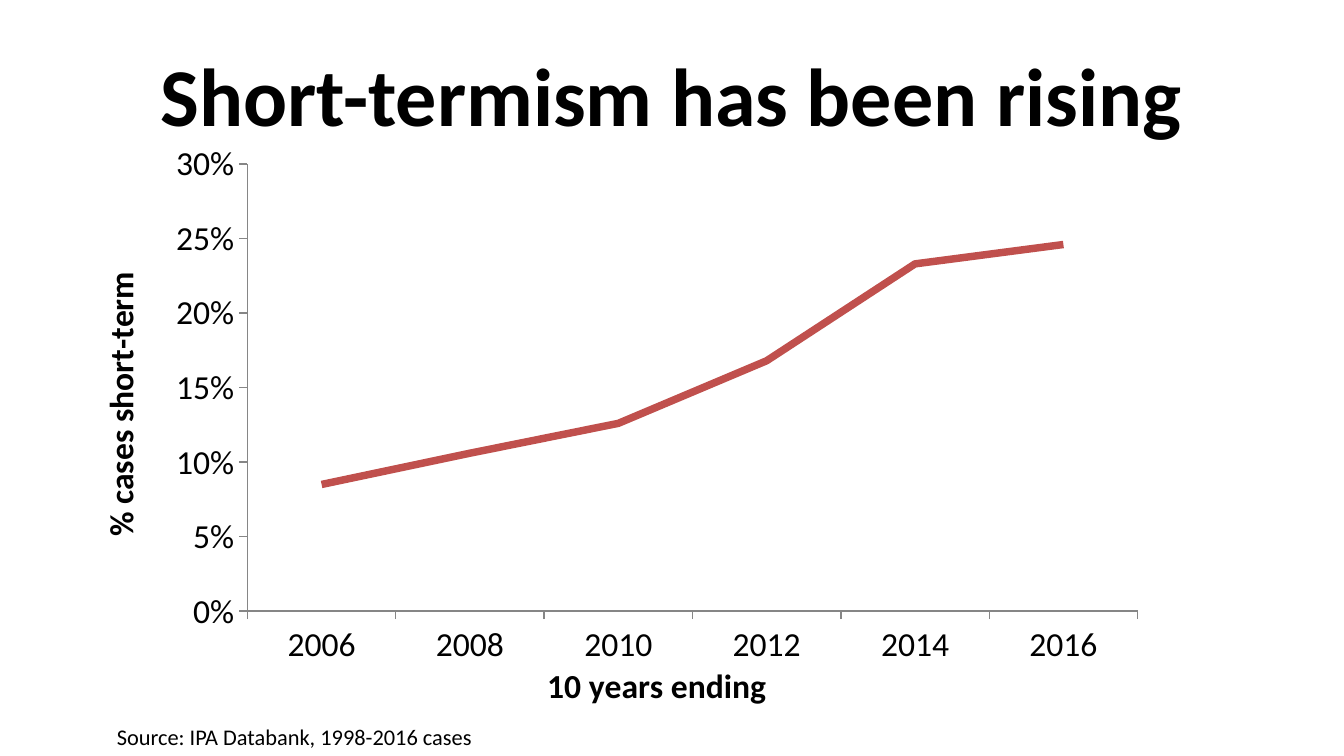
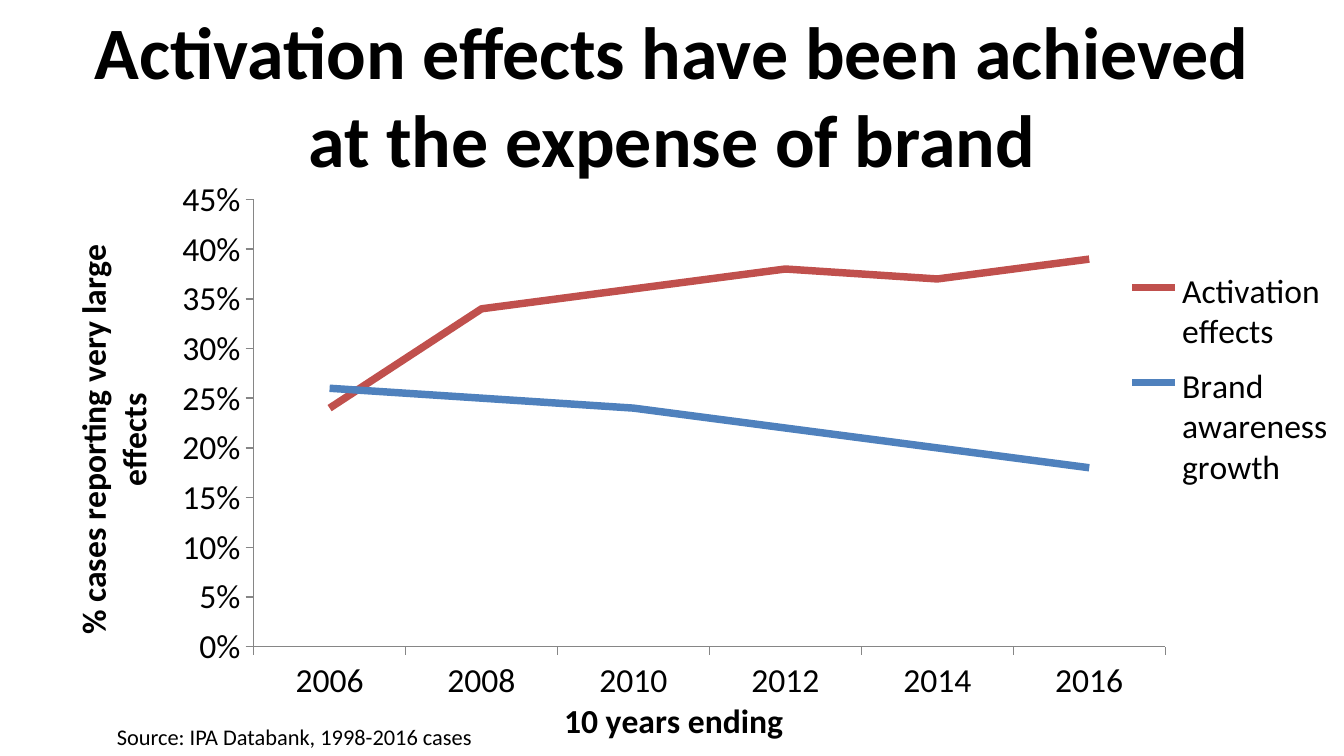
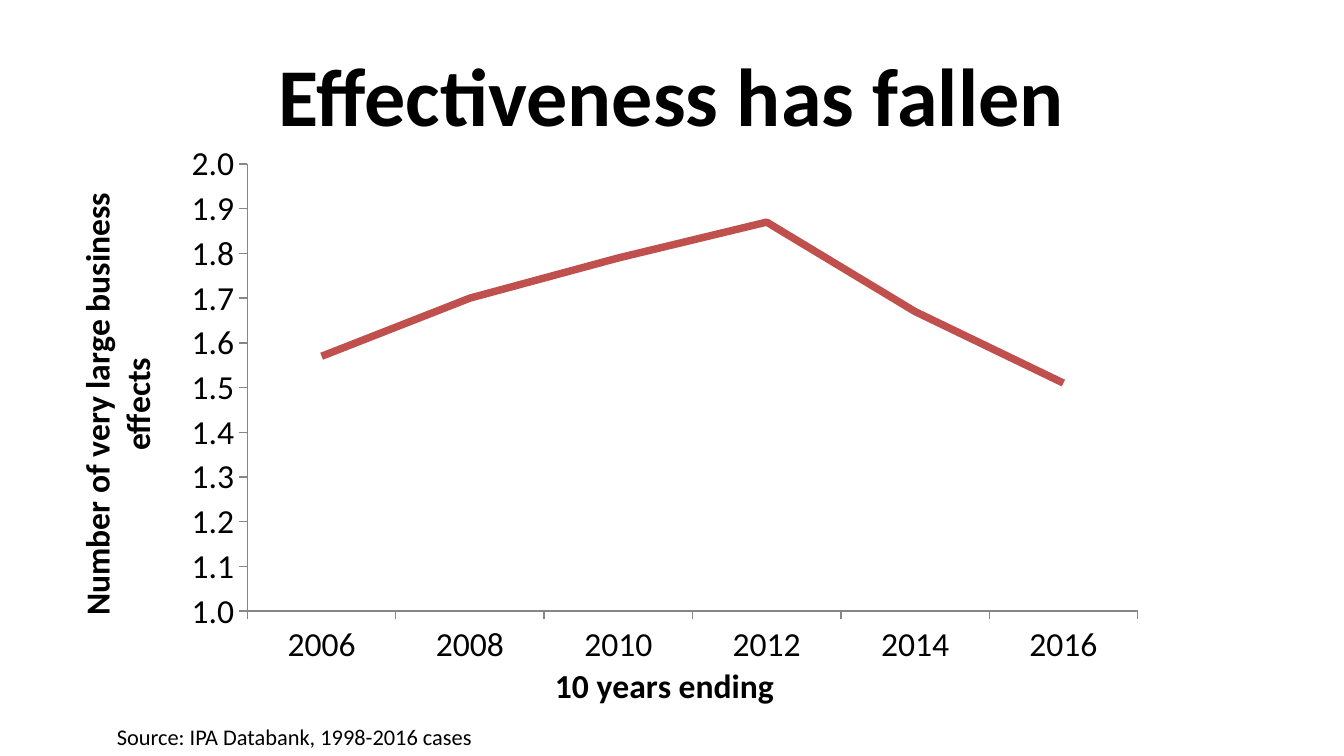
from lxml import etree
from pptx import Presentation
from pptx.chart.data import CategoryChartData as Data
from pptx.dml.color import RGBColor
from pptx.enum.chart import XL_CHART_TYPE as Kind, XL_LEGEND_POSITION as Side
from pptx.enum.chart import XL_TICK_MARK as Tick
from pptx.enum.text import MSO_ANCHOR as Anchor, MSO_AUTO_SIZE as Fit, PP_ALIGN as Align
from pptx.oxml.ns import qn
from pptx.util import Pt

FONT = "Calibri"
BLACK, GREY, RED, BLUE = "000000", "868686", "C0504D", "4F81BD"
YEARS = ["2006", "2008", "2010", "2012", "2014", "2016"]
SOURCE = "Source: IPA Databank, 1998-2016 cases"
BOX = (36, 72, 648, 312)
PLOT = (0.149, 0.051, 0.736, 0.768)

SLIDES = [
    dict(
        title="Short-termism has been rising", size=44, box=BOX, plot=PLOT,
        label="% cases short-term", scale=(0, 0.3, 0.05), code="0%",
        lines=[("Series 1", RED, (0.085, 0.106, 0.126, 0.168, 0.233, 0.246))],
    ),
    dict(
        title="Activation effects have been achieved at the expense of brand",
        size=39.6, box=(34, 91, 684, 312), plot=(0.149, 0.051, 0.714, 0.768),
        label="% cases reporting very large effects", scale=(0, 0.45, 0.05), code="0%",
        lines=[
            ("Activation effects", RED, (0.24, 0.34, 0.36, 0.38, 0.37, 0.39)),
            ("Brand awareness growth", BLUE, (0.26, 0.25, 0.24, 0.22, 0.2, 0.18)),
        ],
        legend=(0.83, 0.15, 0.17, 0.42),
    ),
    dict(
        title="Effectiveness has fallen", size=44, box=BOX, plot=PLOT,
        label="Number of very large business effects", scale=(1, 2, 0.1), code="0.0",
        lines=[("Series 1", RED, (1.57, 1.7, 1.79, 1.87, 1.67, 1.51))],
    ),
]


def color(text):
    """Turn a hex string into a colour."""
    return RGBColor.from_string(text)


def style(font, size, bold=False):
    """Set the shared font at a size and weight."""
    for key, value in dict(name=FONT, size=Pt(size), bold=bold).items():
        setattr(font, key, value)
    font.color.rgb = color(BLACK)


def write(slide, text, box, size, look, bold=False, align=Align.LEFT):
    """Add a line of text in a box with the given frame settings."""
    frame = slide.shapes.add_textbox(*map(Pt, box)).text_frame
    for key, value in look.items():
        setattr(frame, key, value)
    par = frame.paragraphs[0]
    par.text, par.alignment = text, align
    style(par.runs[0].font, size, bold)


def place(node, spot, index, inner=False):
    """Give a chart element a fixed place as shares of the chart."""
    for old in node.findall(qn("c:layout")):
        node.remove(old)
    layout = etree.Element(qn("c:layout"))
    manual = etree.SubElement(layout, qn("c:manualLayout"))
    pairs = [("layoutTarget", "inner")] if inner else []
    pairs += [("xMode", "edge"), ("yMode", "edge"), *zip("xywh", spot)]
    for name, value in pairs:
        etree.SubElement(manual, qn(f"c:{name}")).set("val", str(value))
    node.insert(index, layout)


def dress(axis, text):
    """Style an axis and give it a bold title."""
    looks = dict(has_major_gridlines=False, major_tick_mark=Tick.OUTSIDE,
                 minor_tick_mark=Tick.NONE)
    for key, value in looks.items():
        setattr(axis, key, value)
    line = axis.format.line
    line.color.rgb, line.width = color(GREY), Pt(0.75)
    style(axis.tick_labels.font, 18)
    frame = axis.axis_title.text_frame
    frame.text = text
    style(frame.paragraphs[0].runs[0].font, 18, True)


def graph(slide, item):
    """Add the line chart of a slide."""
    data = Data(number_format=item["code"])
    data.categories = YEARS
    for name, _, values in item["lines"]:
        data.add_series(name, values)
    chart = slide.shapes.add_chart(Kind.LINE, *map(Pt, item["box"]), data).chart
    chart.has_title = False
    style(chart.font, 18)
    chart.plots[0].vary_by_categories = False
    for row, (_, tint, _) in zip(chart.plots[0].series, item["lines"]):
        row.smooth = False
        row.format.line.color.rgb = color(tint)
        row.format.line.width = Pt(4)
    axis = chart.value_axis
    dress(chart.category_axis, "10 years ending")
    dress(axis, item["label"])
    for key, value in zip(("minimum_scale", "maximum_scale", "major_unit"), item["scale"]):
        setattr(axis, key, value)
    axis.tick_labels.number_format = item["code"]
    axis.tick_labels.number_format_is_linked = False
    root = chart.element
    place(root.find(".//" + qn("c:plotArea")), item["plot"], 0, True)
    chart.has_legend = "legend" in item
    if chart.has_legend:
        chart.legend.position = Side.RIGHT
        chart.legend.include_in_layout = False
        style(chart.legend.font, 18)
        node = root.find(".//" + qn("c:legend"))
        place(node, item["legend"], len(node.findall(qn("c:legendPos"))))


def main():
    """Build the deck."""
    deck = Presentation()
    deck.slide_width, deck.slide_height = Pt(720), Pt(405)
    head = dict(word_wrap=True, vertical_anchor=Anchor.MIDDLE, auto_size=Fit.NONE)
    foot = dict(word_wrap=False, auto_size=Fit.SHAPE_TO_FIT_TEXT)
    for item in SLIDES:
        slide = deck.slides.add_slide(deck.slide_layouts[6])
        write(slide, item["title"], (36, 16.5, 648, 67.5), item["size"], head, True, Align.CENTER)
        graph(slide, item)
        write(slide, SOURCE, (55.5, 384, 208, 21.5), 12, foot)
    deck.save("out.pptx")


if __name__ == "__main__":
    main()
